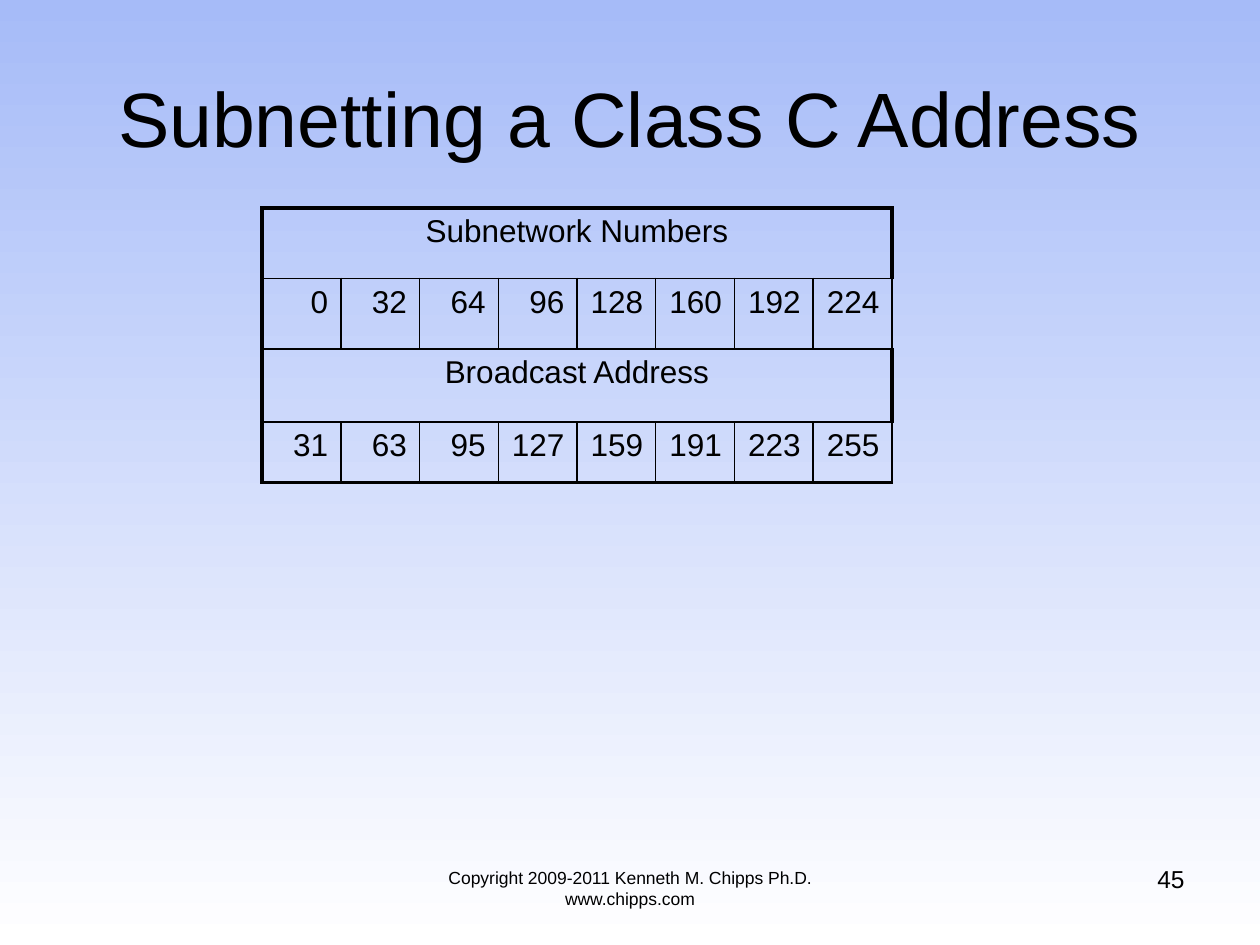
from typing import NamedTuple

from lxml.etree import SubElement
from pptx import Presentation
from pptx.dml.color import RGBColor
from pptx.enum.text import MSO_ANCHOR as Anchor, PP_ALIGN as Align
from pptx.oxml.ns import qn
from pptx.util import Inches, Pt

SKY = RGBColor(0xA6, 0xBB, 0xF8)
WHITE = RGBColor(0xFF, 0xFF, 0xFF)
BLACK = RGBColor(0x00, 0x00, 0x00)
FONT = "Arial"
THIN, THICK = 1, 2.25
COLUMNS = 8
BLOCK = 256 // COLUMNS


class Area(NamedTuple):
    left: float
    top: float
    width: float
    height: float

    def lengths(self):
        return [Inches(value) for value in self]


class Row(NamedTuple):
    texts: list[str]
    height: float

    @property
    def is_heading(self) -> bool:
        return len(self.texts) == 1


TITLE = Area(0.5, 0.3, 9, 1.25)
TABLE = Area(2.08, 1.65, 5, 2.19)
FOOTER = Area(3, 6.83, 4, 0.52)
NUMBER = Area(7.17, 6.81, 2.33, 0.52)
ROWS = [
    Row(["Subnetwork Numbers"], 0.56),
    Row([str(i * BLOCK) for i in range(COLUMNS)], 0.56),
    Row(["Broadcast Address"], 0.58),
    Row([str((i + 1) * BLOCK - 1) for i in range(COLUMNS)], 0.48),
]


def write(frame, text: str, *, size: float, align: Align) -> None:
    para = frame.paragraphs[0]
    para.alignment = align
    span = para.add_run()
    span.text = text
    span.font.name = FONT
    span.font.size = Pt(size)
    span.font.color.rgb = BLACK


def add_text(page, area: Area, text: str, *, size: float, align: Align) -> None:
    box = page.shapes.add_textbox(*area.lengths())
    box.text_frame.word_wrap = True
    write(box.text_frame, text, size=size, align=align)


def set_borders(cell, **widths: float) -> None:
    """Draw black cell borders; the keywords are the sides L, R, T and B."""
    properties = cell._tc.get_or_add_tcPr()
    for side, width in widths.items():
        line = SubElement(properties, qn(f"a:ln{side}"), w=str(Pt(width)))
        fill = SubElement(line, qn("a:solidFill"))
        SubElement(fill, qn("a:srgbClr"), val=str(BLACK))


def add_table(page, area: Area, rows: list[Row]) -> None:
    table = page.shapes.add_table(len(rows), COLUMNS, *area.lengths()).table
    table.first_row = table.horz_banding = False
    for column in table.columns:
        column.width = Inches(area.width / COLUMNS)
    last = len(rows) - 1
    for r, row in enumerate(rows):
        table.rows[r].height = Inches(row.height)
        for c in range(COLUMNS):
            cell = table.cell(r, c)
            set_borders(
                cell,
                L=THICK if c == 0 else THIN,
                R=THICK if row.is_heading else THIN,
                T=THICK if r == 0 else THIN,
                B=THICK if r == last else THIN,
            )
            cell.fill.background()
        if row.is_heading:
            table.cell(r, 0).merge(table.cell(r, COLUMNS - 1))
        align = Align.CENTER if row.is_heading else Align.RIGHT
        for c, text in enumerate(row.texts):
            write(table.cell(r, c).text_frame, text, size=18, align=align)


def paint_background(page) -> None:
    fill = page.background.fill
    fill.gradient()
    fill.gradient_angle = 270
    for stop, color in zip(fill.gradient_stops, (SKY, WHITE)):
        stop.color.rgb = color


def main() -> None:
    deck = Presentation()
    deck.slide_width, deck.slide_height = Inches(10), Inches(7.5)
    page = deck.slides.add_slide(deck.slide_layouts.get_by_name("Title Only"))
    paint_background(page)

    title = page.shapes.title
    title.left, title.top, title.width, title.height = TITLE.lengths()
    title.text_frame.vertical_anchor = Anchor.MIDDLE
    write(title.text_frame, "Subnetting a Class C Address", size=44, align=Align.CENTER)

    add_table(page, TABLE, ROWS)
    add_text(page, FOOTER, "Copyright 2009-2011 Kenneth M. Chipps Ph.D. www.chipps.com",
             size=10, align=Align.CENTER)
    add_text(page, NUMBER, "45", size=14, align=Align.RIGHT)
    deck.save("out.pptx")


if __name__ == "__main__":
    main()
